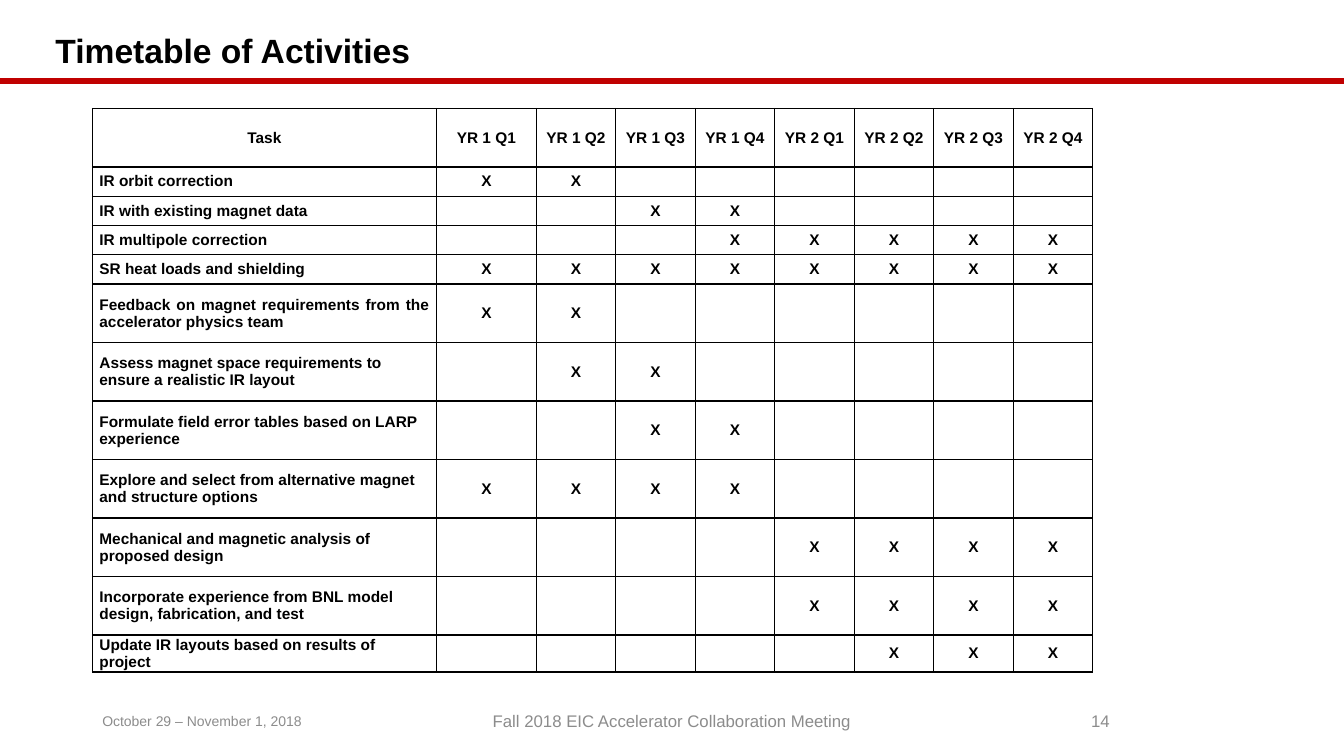
from lxml import etree
from pptx import Presentation
from pptx.dml.color import RGBColor
from pptx.enum.shapes import MSO_CONNECTOR
from pptx.enum.text import MSO_ANCHOR, MSO_AUTO_SIZE, PP_ALIGN
from pptx.oxml.ns import qn
from pptx.util import Pt

LEFT, CENTER, JUSTIFY = PP_ALIGN.LEFT, PP_ALIGN.CENTER, PP_ALIGN.JUSTIFY
MIDDLE = MSO_ANCHOR.MIDDLE
COLORS = {"text": "000000", "rule": "C00000", "footer": "8C8C8C", "border": "000000"}


def write(paragraph, text, size, color, bold=False, align=LEFT):
    paragraph.text = text
    paragraph.alignment = align
    for run in paragraph.runs:
        run.font.name = "Arial"
        run.font.size = Pt(size)
        run.font.bold = bold
        run.font.color.rgb = RGBColor.from_string(COLORS[color])


def add_borders(cell):
    properties = cell._tc.get_or_add_tcPr()
    for side in ("a:lnL", "a:lnR", "a:lnT", "a:lnB"):
        line = etree.SubElement(properties, qn(side), w=str(Pt(1)))
        fill = etree.SubElement(line, qn("a:solidFill"))
        etree.SubElement(fill, qn("a:srgbClr"), val=COLORS["border"])


prs = Presentation()
prs.slide_width, prs.slide_height = Pt(960), Pt(540)
slide = prs.slides.add_slide(prs.slide_layouts[5])

# Title and red rule
title = slide.shapes.title
title.left, title.top, title.width, title.height = Pt(32.4), Pt(18.7), Pt(888.5), Pt(38.2)
title.text_frame.auto_size = MSO_AUTO_SIZE.NONE
title.text_frame.vertical_anchor = MIDDLE
write(title.text_frame.paragraphs[0], "Timetable of Activities", 24, "text", bold=True)
title.text_frame.paragraphs[0].line_spacing = 0.9

rule = slide.shapes.add_connector(MSO_CONNECTOR.STRAIGHT, Pt(-1.4), Pt(57.8), Pt(960), Pt(57.8))
rule.line.color.rgb = RGBColor.from_string(COLORS["rule"])
rule.line.width = Pt(4.5)
etree.SubElement(rule._element.spPr, qn("a:effectLst"))

# Footer: date, meeting, page number
footers = [
    ("October 29 – November 1, 2018", 66, 216, 10, LEFT),
    ("Fall 2018 EIC Accelerator Collaboration Meeting", 318, 324, 12, CENTER),
    ("14", 678, 216, 12, CENTER),
]
for text, left, width, size, align in footers:
    frame = slide.shapes.add_textbox(Pt(left), Pt(500.5), Pt(width), Pt(28.8)).text_frame
    frame.word_wrap = True
    frame.vertical_anchor = MIDDLE
    write(frame.paragraphs[0], text, size, "footer", align=align)

# Timetable: task, active quarters (1 to 8), row height in units
UNIT = 20.9
tasks = [
    ("IR orbit correction", range(1, 3), 1),
    ("IR with existing magnet data", range(3, 5), 1),
    ("IR multipole correction", range(4, 9), 1),
    ("SR heat loads and shielding", range(1, 9), 1),
    ("Feedback on magnet requirements from the accelerator physics team", range(1, 3), 2),
    ("Assess magnet space requirements to ensure a realistic IR layout", range(2, 4), 2),
    ("Formulate field error tables based on LARP experience", range(3, 5), 2),
    ("Explore and select from alternative magnet and structure options", range(1, 5), 2),
    ("Mechanical and magnetic analysis of proposed design", range(5, 9), 2),
    ("Incorporate experience from BNL model design, fabrication, and test", range(5, 9), 2),
    ("Update IR layouts based on results of project", range(6, 9), 1),
]
header = ["Task"] + [f"YR {year} Q{quarter}" for year in (1, 2) for quarter in range(1, 5)]
rows = [header] + [
    [task] + ["X" if quarter in active else "" for quarter in range(1, 9)]
    for task, active, _ in tasks
]
heights = [2 * UNIT] + [units * UNIT for _, _, units in tasks]
widths = [245.8, 71.3] + [56.8] * 7

timetable = slide.shapes.add_table(
    len(rows), len(widths), Pt(66), Pt(77.5), Pt(sum(widths)), Pt(sum(heights))
).table
timetable.first_row = timetable.horz_banding = False
for column, width in zip(timetable.columns, widths):
    column.width = Pt(width)

for r, row in enumerate(rows):
    timetable.rows[r].height = Pt(heights[r])
    for c, text in enumerate(row):
        cell = timetable.cell(r, c)
        cell.margin_left = cell.margin_right = Pt(5)
        cell.margin_top = cell.margin_bottom = 0
        cell.vertical_anchor = MIDDLE
        add_borders(cell)
        cell.fill.background()
        align = CENTER if r == 0 or c > 0 else LEFT
        if text.startswith("Feedback"):
            align = JUSTIFY
        paragraph = cell.text_frame.paragraphs[0]
        write(paragraph, text, 11, "text", bold=True, align=align)
        if not text:  # keeps empty cells from stretching the row
            etree.SubElement(paragraph._p, qn("a:endParaRPr"), sz="1100")

prs.save("out.pptx")
